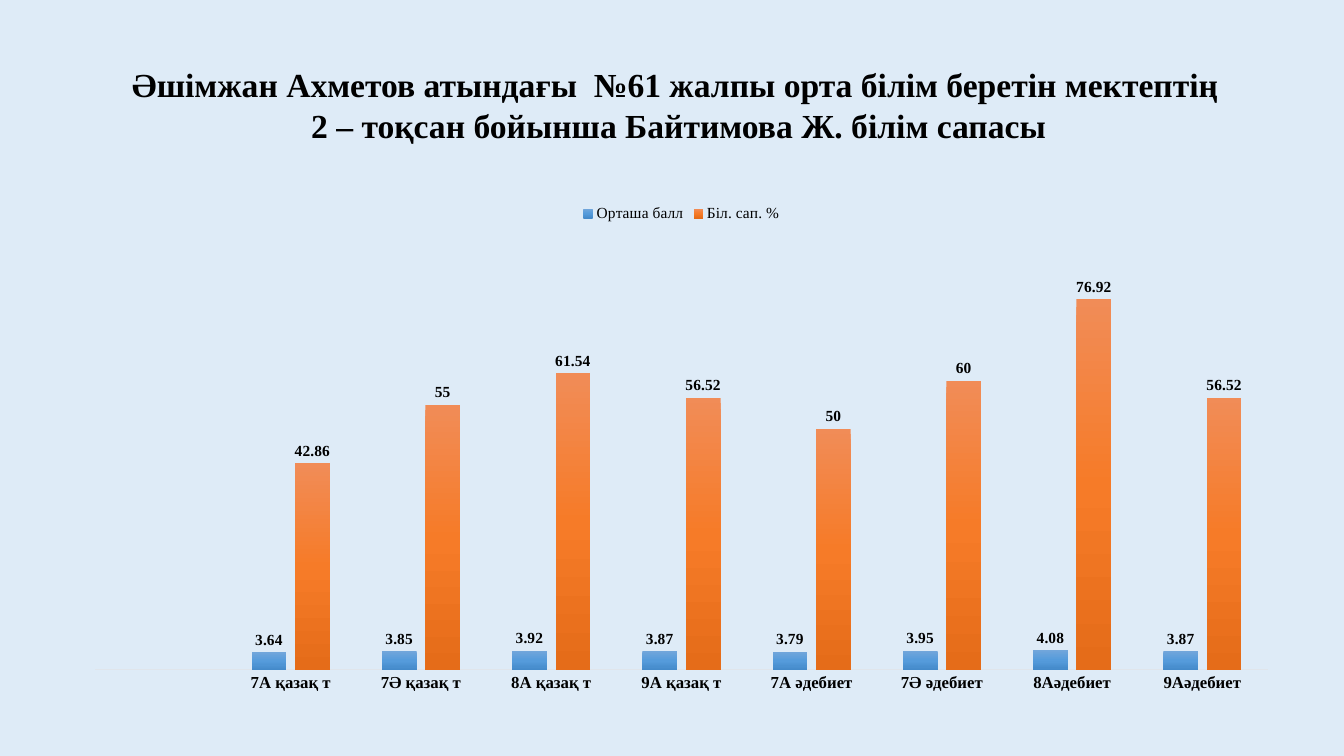
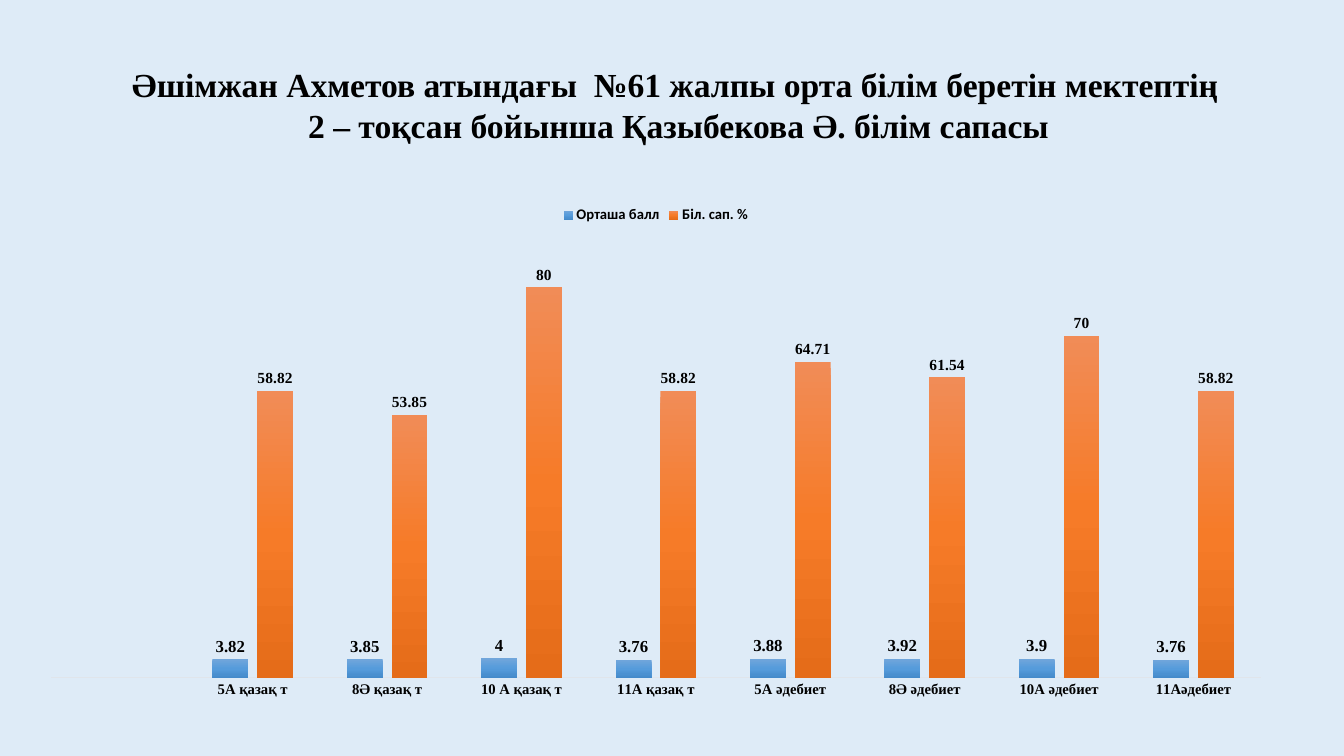
from copy import deepcopy

from pptx import Presentation, util as u
from pptx.chart.data import CategoryChartData
from pptx.dml.color import RGBColor
from pptx.enum import chart as ch, text as tx
from pptx.oxml.ns import qn

SLIDE_W, SLIDE_H = 1344, 756
EMU_PER_PX = 12192000 / SLIDE_W

BACKGROUND = "DEEBF7"
INK = "000000"
AXIS_LINE = "E0E5EB"
SERIF, SANS = "Times New Roman", "Calibri"
SCORE, QUALITY = "Орташа балл", "Біл. сап. %"
GRADIENTS = {
    SCORE: ("71A6DB", "559BDB", "448ACA"),
    QUALITY: ("F18C57", "F67B28", "E56C19"),
}
SCHOOL = "Әшімжан Ахметов атындағы  №61 жалпы орта білім беретін мектептің"
TITLE_BOX = (122, 59, 1126, 92)

REPORTS = [
    dict(
        teacher="Байтимова Ж.",
        box=(71, 194, 1221, 508),
        classes=["7А қазақ т", "7Ә қазақ т", "8А қазақ т", "9А қазақ т",
                 "7А әдебиет", "7Ә әдебиет", "8Аәдебиет", "9Аәдебиет"],
        results={
            SCORE: [3.64, 3.85, 3.92, 3.87, 3.79, 3.95, 4.08, 3.87],
            QUALITY: [42.86, 55, 61.54, 56.52, 50, 60, 76.92, 56.52],
        },
        axis_size=12,
        label_sizes={SCORE: 11, QUALITY: 11},
        legend_format=dict(size=11, bold=False),
    ),
    dict(
        teacher="Қазыбекова Ә.",
        box=(26, 195, 1260, 513),
        classes=["5А қазақ т", "8Ә қазақ т", "10 А қазақ т", "11А қазақ т",
                 "5А әдебиет", "8Ә әдебиет", "10А әдебиет", "11Аәдебиет"],
        results={
            SCORE: [3.82, 3.85, 4, 3.76, 3.88, 3.92, 3.9, 3.76],
            QUALITY: [58.82, 53.85, 80, 58.82, 64.71, 61.54, 70, 58.82],
        },
        axis_size=10.5,
        label_sizes={SCORE: 12, QUALITY: 11},
        legend_format=dict(size=10.5, face=SANS),
    ),
]


def px(length):
    return u.Emu(round(length * EMU_PER_PX))


def rgb(code):
    return RGBColor.from_string(code)


def format_font(font, size, bold=True, face=SERIF, color=INK):
    font.size, font.bold, font.name = u.Pt(size), bold, face
    font.color.rgb = rgb(color)


def write_line(paragraph, line, align, spacing, **font_format):
    paragraph.alignment = align
    paragraph.line_spacing = u.Pt(spacing)
    paragraph.space_before = u.Pt(0)
    run = paragraph.add_run()
    run.text = line
    format_font(run.font, **font_format)


def place_title(title, box, teacher):
    title.left, title.top, title.width, title.height = map(px, box)
    frame = title.text_frame
    frame.word_wrap = True
    frame.auto_size = tx.MSO_AUTO_SIZE.SHAPE_TO_FIT_TEXT
    frame.vertical_anchor = tx.MSO_ANCHOR.TOP
    frame.margin_left, frame.margin_right = px(10), px(23)
    frame.margin_top = frame.margin_bottom = px(5)
    style = dict(spacing=29, size=24)
    write_line(frame.paragraphs[0], SCHOOL, tx.PP_ALIGN.LEFT, **style)
    write_line(frame.add_paragraph(), f"2 – тоқсан бойынша {teacher} білім сапасы",
               tx.PP_ALIGN.CENTER, **style)


def fill_gradient(series, colors):
    """Fill the bars from top to bottom with evenly spaced colours."""
    fill = series.format.fill
    fill.gradient()
    fill.gradient_angle = 270
    stop_list = series._element.find(".//" + qn("a:gsLst"))
    while len(stop_list) < len(colors):
        stop_list.append(deepcopy(stop_list[0]))
    for index, (stop, color) in enumerate(zip(fill.gradient_stops, colors)):
        stop.position = index / (len(colors) - 1)
        stop.color.rgb = rgb(color)


def format_axes(chart, size):
    classes = chart.category_axis
    classes.major_tick_mark = classes.minor_tick_mark = ch.XL_TICK_MARK.NONE
    classes.format.line.color.rgb = rgb(AXIS_LINE)
    classes.format.line.width = u.Pt(0.75)
    format_font(classes.tick_labels.font, size)
    values = chart.value_axis
    values.minimum_scale, values.maximum_scale = 0, 90
    values.has_major_gridlines = False
    values.visible = False


def place_chart(slide, box, classes, results, axis_size, label_sizes, legend_format):
    """Draw the results by class, after one empty leading category."""
    data = CategoryChartData()
    data.categories = [""] + classes
    for name, values in results.items():
        data.add_series(name, [None] + values)
    chart = slide.shapes.add_chart(
        ch.XL_CHART_TYPE.COLUMN_CLUSTERED, *map(px, box), data).chart
    chart.has_title = False
    format_font(chart.font, 10, bold=False, face=SANS)
    format_axes(chart, axis_size)

    chart.has_legend = True
    chart.legend.position = ch.XL_LEGEND_POSITION.TOP
    chart.legend.include_in_layout = False
    format_font(chart.legend.font, **legend_format)

    plot = chart.plots[0]
    plot.vary_by_categories = False
    plot.gap_width, plot.overlap = 150, -25
    for series in plot.series:
        fill_gradient(series, GRADIENTS[series.name])
        labels = series.data_labels
        labels.show_value = True
        labels.position = ch.XL_LABEL_POSITION.OUTSIDE_END
        format_font(labels.font, label_sizes[series.name])


def add_report(deck, teacher, **chart_parts):
    slide = deck.slides.add_slide(deck.slide_layouts[5])
    place_title(slide.shapes.title, TITLE_BOX, teacher)
    place_chart(slide, **chart_parts)


def main():
    deck = Presentation()
    deck.slide_width, deck.slide_height = px(SLIDE_W), px(SLIDE_H)
    backdrop = deck.slide_master.background.fill
    backdrop.solid()
    backdrop.fore_color.rgb = rgb(BACKGROUND)
    for report in REPORTS:
        add_report(deck, **report)
    deck.save("out.pptx")


if __name__ == "__main__":
    main()
